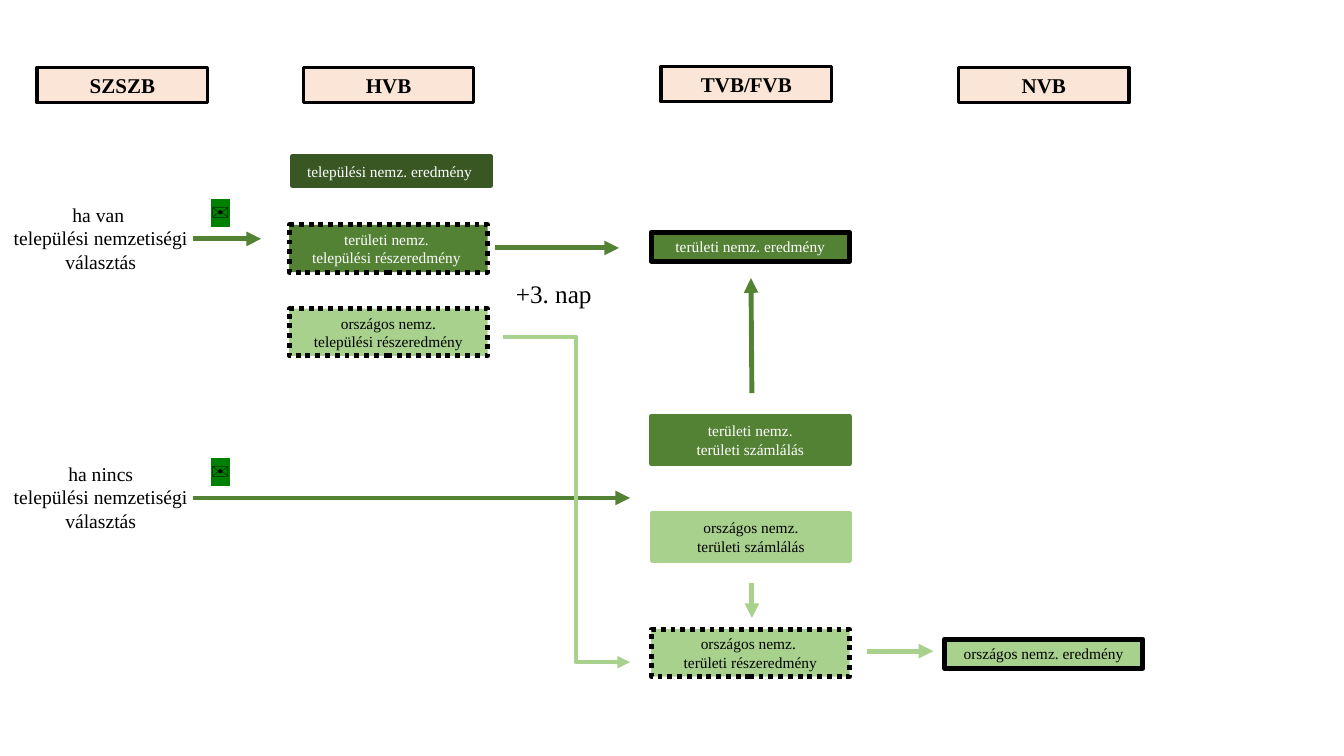
from dataclasses import dataclass

from lxml import etree
from pptx import Presentation
from pptx import util as u
from pptx.dml.color import RGBColor
from pptx.enum import dml, shapes, text
from pptx.oxml import ns

FONT = "Times New Roman"
BLACK = RGBColor(0x00, 0x00, 0x00)
WHITE = RGBColor(0xFF, 0xFF, 0xFF)
PEACH = RGBColor(0xFB, 0xE5, 0xD6)
DARK_GREEN = RGBColor(0x38, 0x57, 0x23)
GREEN = RGBColor(0x54, 0x82, 0x35)
LIGHT_GREEN = RGBColor(0xA9, 0xD1, 0x8E)
HEADER_WIDTH, HEADER_HEIGHT = 121.7, 25.2
STEP_WIDTH = 141.8
ONE_LINE, TWO_LINES = 20.9, 33.8


@dataclass
class Box:
    left: float
    top: float
    width: float
    height: float
    lines: tuple[str, ...]
    fill: RGBColor
    border: RGBColor = BLACK
    color: RGBColor = BLACK
    dotted: bool = False
    weight: float = 3.5
    size: float = 11
    bold: bool = False


@dataclass
class Label:
    left: float
    top: float
    width: float
    height: float
    lines: tuple[str, ...]
    size: float = 18
    centred: bool = False
    highlight: str = ""


@dataclass
class Arrow:
    start: tuple[float, float]
    end: tuple[float, float]
    color: RGBColor
    weight: float = 3.5
    bend: int = 0


HEADERS = [
    Box(left, top, HEADER_WIDTH, HEADER_HEIGHT, (name,), PEACH, weight=2.5, size=15, bold=True)
    for name, left, top in (
        ("SZSZB", 26.6, 48.2),
        ("HVB", 216.7, 48.2),
        ("TVB/FVB", 472.3, 47.5),
        ("NVB", 684.7, 48.2),
    )
]

STEPS = [
    Box(208.8, 111.6, STEP_WIDTH, ONE_LINE, ("települési nemz. eredmény ",),
        DARK_GREEN, DARK_GREEN, WHITE),
    Box(206.6, 160.6, STEP_WIDTH, TWO_LINES, ("területi nemz. ", "települési részeredmény "),
        GREEN, color=WHITE, dotted=True),
    Box(206.6, 220.5, STEP_WIDTH, TWO_LINES, ("országos nemz.", "települési részeredmény"),
        LIGHT_GREEN, dotted=True),
    Box(465.1, 165.8, STEP_WIDTH, ONE_LINE, ("területi nemz. eredmény",), GREEN, color=WHITE),
    Box(465.1, 449.5, STEP_WIDTH, TWO_LINES, ("országos nemz. \nterületi részeredmény",),
        LIGHT_GREEN, dotted=True),
    Box(674.6, 456.5, STEP_WIDTH, ONE_LINE, ("országos nemz. eredmény",), LIGHT_GREEN),
    Box(465.1, 297.4, STEP_WIDTH, TWO_LINES, ("területi nemz.", "területi számlálás"),
        GREEN, GREEN, WHITE),
    Box(466.2, 366.5, 140.4, TWO_LINES, ("országos nemz.", "területi számlálás"),
        LIGHT_GREEN, LIGHT_GREEN),
]

ARROWS = [
    Arrow((537.1, 280.8), (536.4, 198.7), GREEN),
    Arrow((353.5, 177.1), (442.1, 177.1), GREEN),
    Arrow((537.1, 416.2), (537.1, 441.4), LIGHT_GREEN),
    Arrow((619.2, 465.1), (666.7, 465.1), LIGHT_GREEN),
    Arrow((138.2, 170.6), (186.5, 170.6), GREEN),
    Arrow((138.2, 355.7), (450, 355.7), GREEN),
    Arrow((359.3, 240.7), (450, 473), LIGHT_GREEN, weight=3, bend=57700),
]

LABELS = [Label(361.4, 195.1, 72.7, 28.8, ("+3. nap",))]
for condition, label_top in (("ha van ", 141.1), ("ha nincs", 326.2)):
    LABELS += [
        Label(144, label_top - 4.3, 36, 28.8, ("✉",), highlight="008000"),
        Label(0, label_top, 144, 58.3, (condition, "települési nemzetiségi választás"),
              size=14, centred=True),
    ]


def write_lines(frame, lines: tuple[str, ...], size: float, color: RGBColor,
                centred: bool, bold: bool = False, highlight: str = "") -> None:
    frame.word_wrap = True
    frame.auto_size = text.MSO_AUTO_SIZE.SHAPE_TO_FIT_TEXT
    for index, line in enumerate(lines):
        para = frame.add_paragraph() if index else frame.paragraphs[0]
        para.alignment = text.PP_ALIGN.CENTER if centred else text.PP_ALIGN.LEFT
        for part_index, part in enumerate(line.split("\n")):
            if part_index:
                para.add_line_break()
            span = para.add_run()
            span.text = part
            span.font.size = u.Pt(size)
            span.font.bold = bold
            span.font.color.rgb = color
            if highlight:
                mark = etree.SubElement(span.font._element, ns.qn("a:highlight"))
                etree.SubElement(mark, ns.qn("a:srgbClr"), val=highlight)
            span.font.name = FONT


def draw_box(page, box: Box) -> None:
    shape = page.shapes.add_shape(
        shapes.MSO_SHAPE.RECTANGLE,
        u.Pt(box.left), u.Pt(box.top), u.Pt(box.width), u.Pt(box.height))
    shape.shadow.inherit = False
    shape.fill.solid()
    shape.fill.fore_color.rgb = box.fill
    shape.line.color.rgb = box.border
    shape.line.width = u.Pt(box.weight)
    if box.dotted:
        shape.line.dash_style = dml.MSO_LINE.ROUND_DOT
    shape.text_frame.vertical_anchor = text.MSO_ANCHOR.MIDDLE
    write_lines(shape.text_frame, box.lines, box.size, box.color, True, box.bold)


def draw_label(page, label: Label) -> None:
    shape = page.shapes.add_textbox(
        u.Pt(label.left), u.Pt(label.top), u.Pt(label.width), u.Pt(label.height))
    write_lines(shape.text_frame, label.lines, label.size, BLACK,
                label.centred, highlight=label.highlight)


def draw_arrow(page, arrow: Arrow) -> None:
    kind = shapes.MSO_CONNECTOR.ELBOW if arrow.bend else shapes.MSO_CONNECTOR.STRAIGHT
    connector = page.shapes.add_connector(
        kind, *(u.Pt(value) for value in arrow.start + arrow.end))
    connector.line.color.rgb = arrow.color
    connector.line.width = u.Pt(arrow.weight)
    properties = connector._element.spPr
    etree.SubElement(properties.find(ns.qn("a:ln")), ns.qn("a:tailEnd"), type="triangle")
    etree.SubElement(properties, ns.qn("a:effectLst"))
    if arrow.bend:
        adjustments = properties.find(ns.qn("a:prstGeom")).get_or_add_avLst()
        etree.SubElement(adjustments, ns.qn("a:gd"), name="adj1", fmla=f"val {arrow.bend}")


def main() -> None:
    deck = Presentation()
    deck.slide_width, deck.slide_height = u.Pt(960), u.Pt(540)
    page = deck.slides.add_slide(deck.slide_layouts[6])
    for box in HEADERS + STEPS:
        draw_box(page, box)
    for arrow in ARROWS:
        draw_arrow(page, arrow)
    for label in LABELS:
        draw_label(page, label)
    deck.save("out.pptx")


if __name__ == "__main__":
    main()
